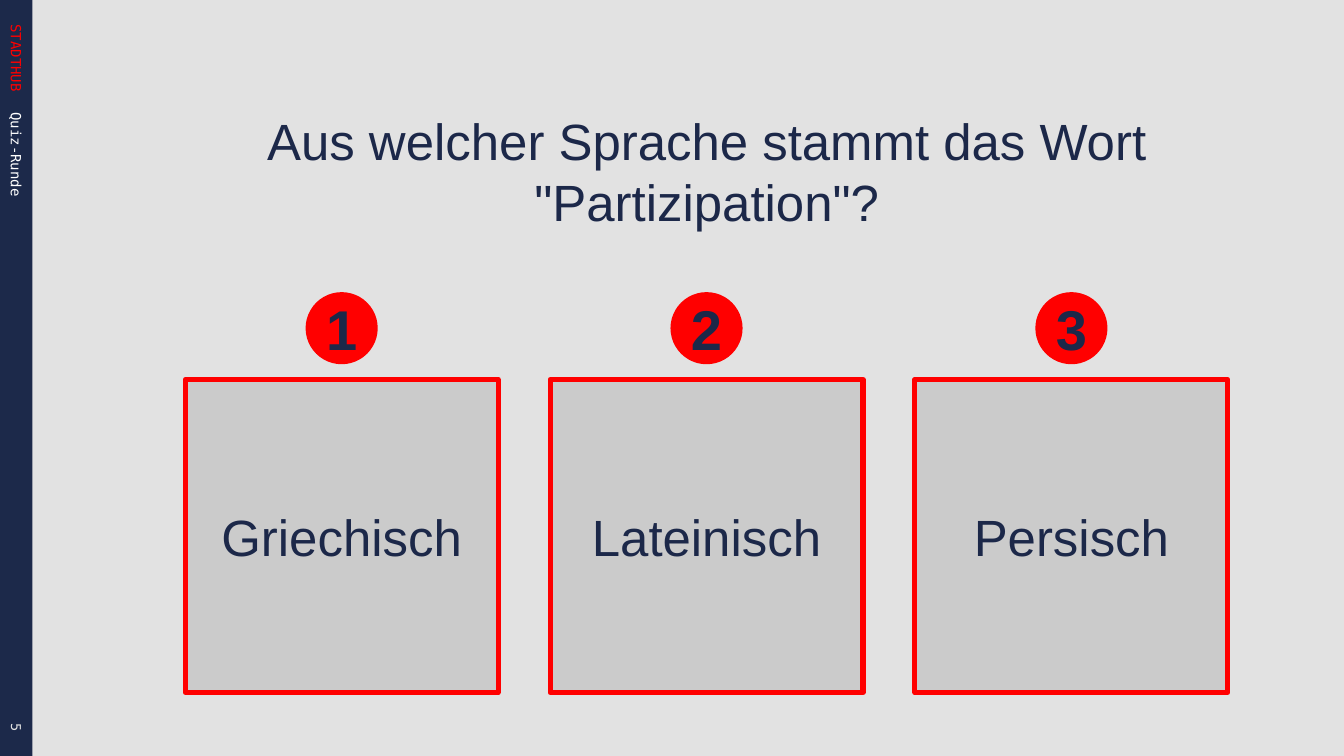
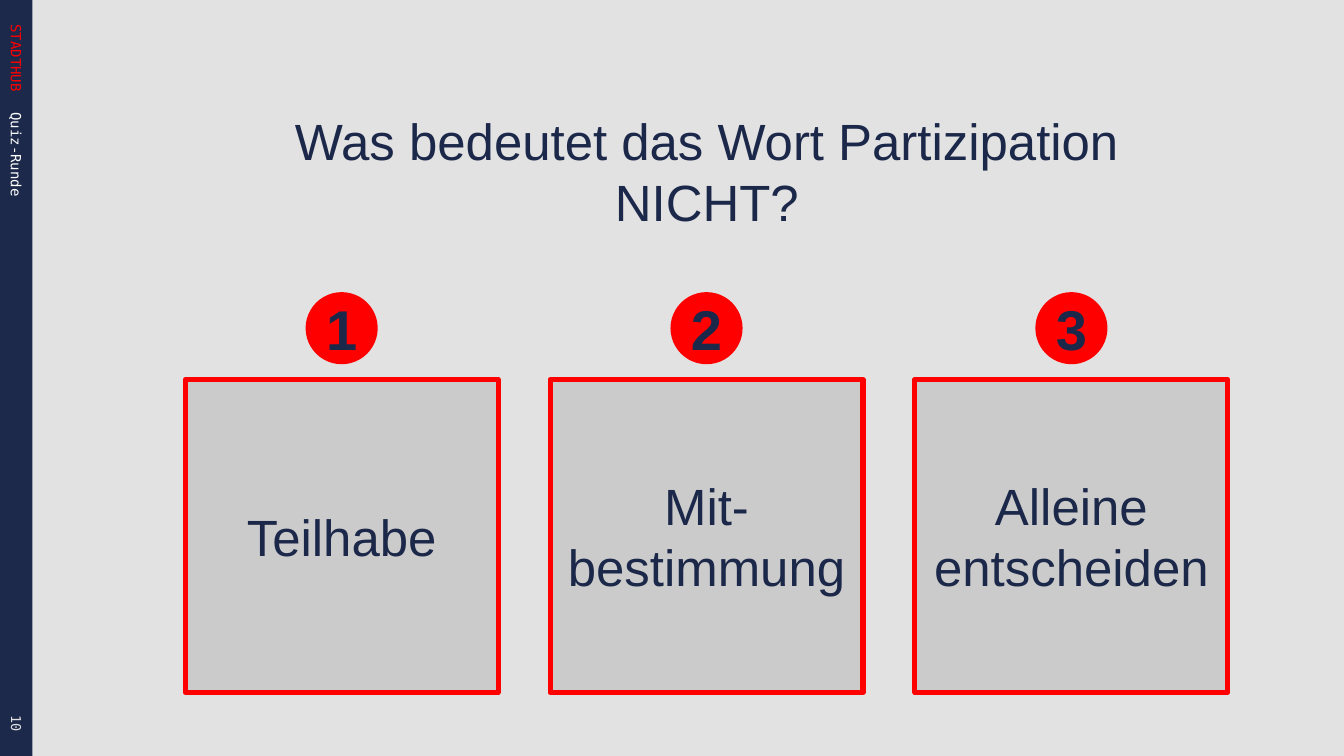
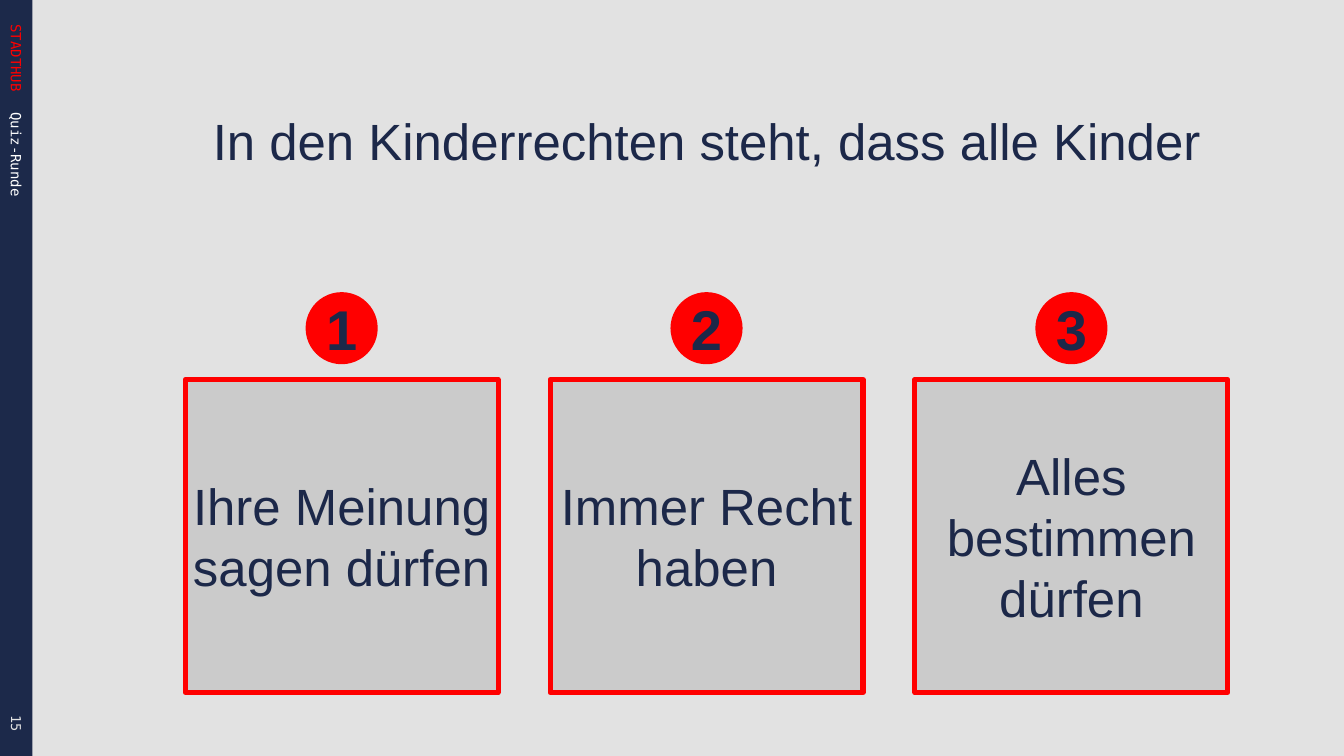
import pptx
import pptx.util
import pptx.dml.color
import pptx.enum.shapes
import pptx.enum.text

Inches = pptx.util.Inches
Pt = pptx.util.Pt
RGBColor = pptx.dml.color.RGBColor
Shape = pptx.enum.shapes.MSO_SHAPE
Align = pptx.enum.text.PP_ALIGN
Anchor = pptx.enum.text.MSO_ANCHOR

BACKGROUND = RGBColor(0xE2, 0xE2, 0xE2)
BAND = RGBColor(0x1C, 0x29, 0x4A)
INK = RGBColor(0x1C, 0x28, 0x49)
RED = RGBColor(0xFF, 0x00, 0x00)
CARD = RGBColor(0xCB, 0xCB, 0xCB)
WHITE = RGBColor(0xFF, 0xFF, 0xFF)

SLIDE_WIDTH, SLIDE_HEIGHT = 21.99, 12.37
CARD_LEFT, CARD_TOP, CARD_SIZE, CARD_STEP = 3.03, 6.21, 5.12, 5.97
BADGE_TOP, BADGE_SIZE = 4.78, 1.18
BADGE_INDENT = (CARD_SIZE - BADGE_SIZE) / 2

BODY_FONT = {"name": "Arial", "size": Pt(60), "bold": False}
BADGE_FONT = {"name": "Arial", "size": Pt(66), "bold": True}
LABEL_FONT = {"name": "DejaVu Sans Mono", "size": Pt(16.5)}
NUMBER_FONT = {"name": "DejaVu Sans Mono", "size": Pt(16)}

QUESTIONS = [
    ("5", 'Aus welcher Sprache stammt das Wort "Partizipation"?',
     ["Griechisch", "Lateinisch", "Persisch"]),
    ("10", "Was bedeutet das Wort Partizipation NICHT?",
     ["Teilhabe", "Mit-bestimmung", "Alleine entscheiden"]),
    ("15", "In den Kinderrechten steht, dass alle Kinder",
     ["Ihre Meinung sagen dürfen", "Immer Recht haben", "Alles bestimmen dürfen"]),
]


def write(shape, text, font, color, align, anchor, inset=(0.1, 0.05)):
    frame = shape.text_frame
    across, down = (Inches(length) for length in inset)
    settings = {
        "word_wrap": True,
        "auto_size": pptx.enum.text.MSO_AUTO_SIZE.NONE,
        "vertical_anchor": anchor,
        "margin_left": across,
        "margin_right": across,
        "margin_top": down,
        "margin_bottom": down,
    }
    for key, value in settings.items():
        setattr(frame, key, value)
    para = frame.paragraphs[0]
    para.alignment = align
    span = para.add_run()
    span.text = text
    for key, value in font.items():
        setattr(span.font, key, value)
    span.font.color.rgb = color


def add_block(page, kind, left, top, width, height, fill):
    block = page.shapes.add_shape(kind, Inches(left), Inches(top), Inches(width), Inches(height))
    block.shadow.inherit = False
    block.fill.solid()
    block.fill.fore_color.rgb = fill
    block.line.fill.background()
    return block


deck = pptx.Presentation()
deck.slide_width = Inches(SLIDE_WIDTH)
deck.slide_height = Inches(SLIDE_HEIGHT)
master_fill = deck.slide_master.background.fill
master_fill.solid()
master_fill.fore_color.rgb = BACKGROUND

for number, question, answers in QUESTIONS:
    page = deck.slides.add_slide(deck.slide_layouts[5])
    add_block(page, Shape.RECTANGLE, 0, 0, 0.53, SLIDE_HEIGHT, BAND)

    band_labels = [
        (number, 10.85, 1.12, NUMBER_FONT, BACKGROUND, Align.RIGHT),
        ("STADTHUB", 0.4, 1.2, LABEL_FONT, RED, Align.LEFT),
        ("Quiz-Runde", 1.84, 7.32, LABEL_FONT, WHITE, Align.LEFT),
    ]
    for text, top, height, font, color, align in band_labels:
        box = page.shapes.add_textbox(Inches(0.13), Inches(top), Inches(0.28), Inches(height))
        write(box, text, font, color, align, Anchor.MIDDLE, (0, 0))
        box.text_frame._txBody.bodyPr.set("vert", "vert")

    title = page.shapes.title
    place = {"left": 3.12, "top": 1.74, "width": 16.89, "height": 0.89}
    for key, value in place.items():
        setattr(title, key, Inches(value))
    write(title, question, BODY_FONT, INK, Align.CENTER, Anchor.TOP)

    for index, answer in enumerate(answers):
        left = CARD_LEFT + index * CARD_STEP
        card = add_block(page, Shape.RECTANGLE, left, CARD_TOP, CARD_SIZE, CARD_SIZE, CARD)
        card.line.color.rgb = RED
        card.line.width = Pt(6)
        write(card, answer, BODY_FONT, INK, Align.CENTER, Anchor.MIDDLE)
        badge = add_block(page, Shape.OVAL, left + BADGE_INDENT, BADGE_TOP,
                          BADGE_SIZE, BADGE_SIZE, RED)
        write(badge, str(index + 1), BADGE_FONT, INK, Align.CENTER, Anchor.MIDDLE, (0, 0))

deck.save("out.pptx")
